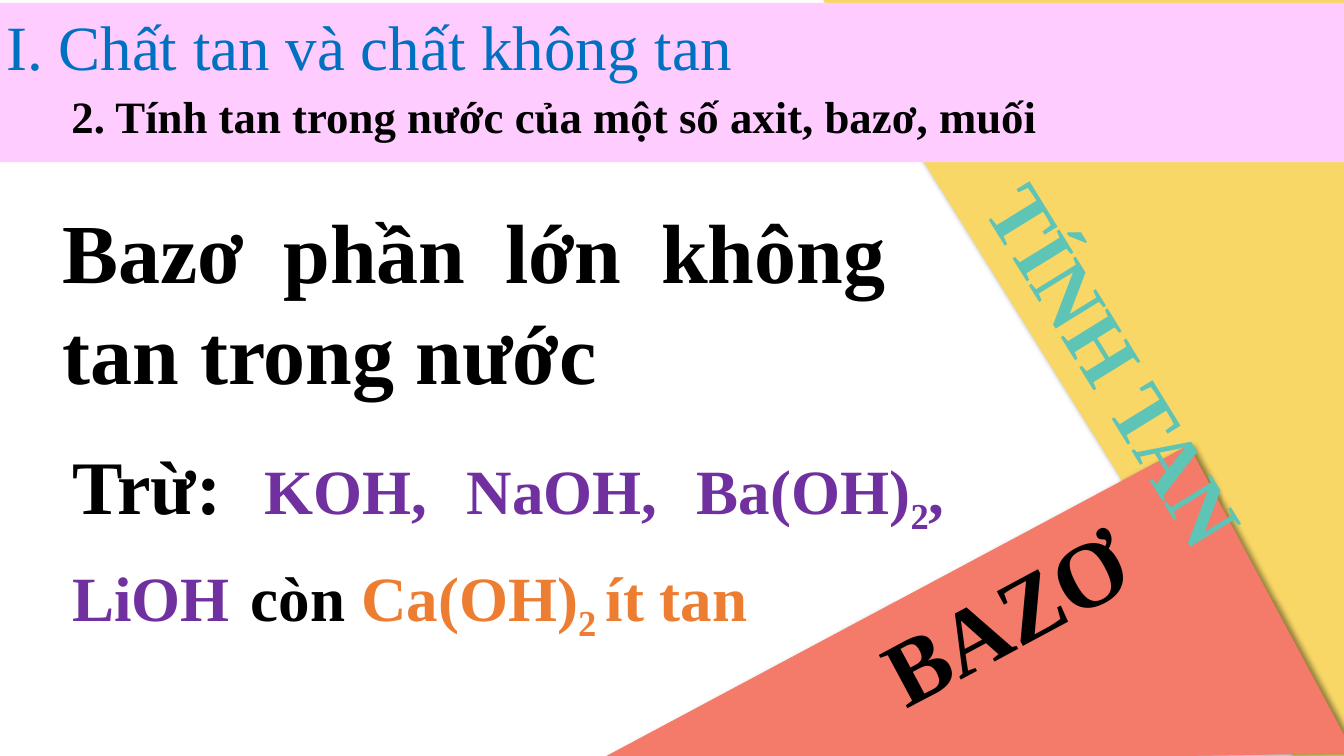
from lxml.etree import SubElement
from pptx import Presentation
from pptx.dml.color import RGBColor
from pptx.enum.shapes import MSO_SHAPE
from pptx.enum.text import MSO_ANCHOR, MSO_AUTO_SIZE, PP_ALIGN
from pptx.oxml.ns import qn
from pptx.util import Pt

FONT = "Times New Roman"
BLACK = RGBColor(0x00, 0x00, 0x00)
BLUE = RGBColor(0x00, 0x70, 0xC0)
PURPLE = RGBColor(0x70, 0x30, 0xA0)
ORANGE = RGBColor(0xED, 0x7D, 0x31)
TEAL = RGBColor(0x5E, 0xC4, 0xB6)
PINK = RGBColor(0xFF, 0xCC, 0xFF)
YELLOW = RGBColor(0xF8, 0xD7, 0x66)
CORAL = RGBColor(0xF4, 0x7B, 0x6A)


def paint(shape, color):
    shape.shadow.inherit = False
    shape.fill.solid()
    shape.fill.fore_color.rgb = color
    shape.line.fill.background()


def write(shape, box, alignment, runs, bold=True):
    """Place the shape and fill it with runs of (text, size, color, is_subscript)."""
    shape.left, shape.top, shape.width, shape.height = [Pt(length) for length in box]
    frame = shape.text_frame
    frame.word_wrap = True
    frame.auto_size = MSO_AUTO_SIZE.NONE
    frame.vertical_anchor = MSO_ANCHOR.TOP
    paragraph = frame.paragraphs[0]
    paragraph.alignment = alignment
    paragraph.space_before = Pt(0)
    for text, size, color, is_subscript in runs:
        run = paragraph.add_run()
        run.text = text
        run.font.name = FONT
        run.font.size = Pt(size)
        run.font.bold = bold
        run.font.color.rgb = color
        if is_subscript:
            run.font._element.set("baseline", "-25000")


presentation = Presentation()
presentation.slide_width = Pt(960)
presentation.slide_height = Pt(540)
slide = presentation.slides.add_slide(presentation.slide_layouts[1])
shapes = slide.shapes
title, body = slide.placeholders

# Yellow triangle, pink header band and coral triangle, from back to front
triangles = [
    (YELLOW, 45, [(960, 0), (960, 598.3), (588.2, 0)]),
    (CORAL, 0, [(967, 537.8), (419.8, 547.2), (848.9, 317.5)]),
]
for color, shadow_angle, corners in triangles:
    builder = shapes.build_freeform(*corners[0], scale=Pt(1))
    builder.add_line_segments(corners[1:], close=True)
    triangle = builder.convert_to_shape()
    paint(triangle, color)
    effects = triangle._element.spPr.find(qn("a:effectLst"))
    shadow = SubElement(effects, qn("a:outerShdw"), blurRad=str(Pt(4)), dist=str(Pt(3)),
                        dir=str(shadow_angle * 60000), algn="ctr", rotWithShape="0")
    shadow_color = SubElement(shadow, qn("a:srgbClr"), val=str(BLACK))
    SubElement(shadow_color, qn("a:alpha"), val="40000")
    if color == YELLOW:
        band = shapes.add_shape(MSO_SHAPE.RECTANGLE, Pt(0), Pt(2), Pt(960), Pt(113.8))
        paint(band, PINK)

# Headings: the title has to lie above the band
shapes._spTree.append(title._element)
write(title, (-2.9, 1.4, 915.8, 61.9), PP_ALIGN.LEFT,
      [("I. Chất tan và chất không tan", 45, BLUE, False)], bold=False)

labels = [
    ("2. Tính tan trong nước của một số axit, bazơ, muối", (18, 59.8, 756, 46.1), 32, BLACK, 0),
    ("TÍNH TAN", (549.4, 220.3, 496.8, 79.9), 60, TEAL, 58.3),
    ("BAZƠ", (439.2, 396, 556.6, 87.1), 66, BLACK, 331.8),
]
for text, box, size, color, rotation in labels:
    label = shapes.add_textbox(0, 0, 0, 0)
    write(label, box, PP_ALIGN.CENTER, [(text, size, color, False)])
    label.rotation = rotation

# Rule and its exceptions
shapes._spTree.append(body._element)
write(body, (37.4, 139, 602.6, 152.6), PP_ALIGN.JUSTIFY,
      [("Bazơ phần lớn không tan trong nước", 60, BLACK, False)])
properties = body.text_frame.paragraphs[0]._p.get_or_add_pPr()
properties.set("marL", "0")
properties.set("indent", "0")
SubElement(properties, qn("a:buNone"))

exceptions = shapes.add_textbox(0, 0, 0, 0)
write(exceptions, (44.6, 309.6, 637.2, 145.4), PP_ALIGN.JUSTIFY, [
    ("Trừ: ", 54, BLACK, False),
    ("KOH, NaOH, Ba(OH)", 45, PURPLE, False),
    ("2", 45, PURPLE, True),
    (", LiOH", 45, PURPLE, False),
    (" ", 60, PURPLE, False),
    ("còn ", 45, BLACK, False),
    ("Ca(OH)", 45, ORANGE, False),
    ("2 ", 45, ORANGE, True),
    ("ít tan", 45, ORANGE, False),
])

presentation.save("out.pptx")
